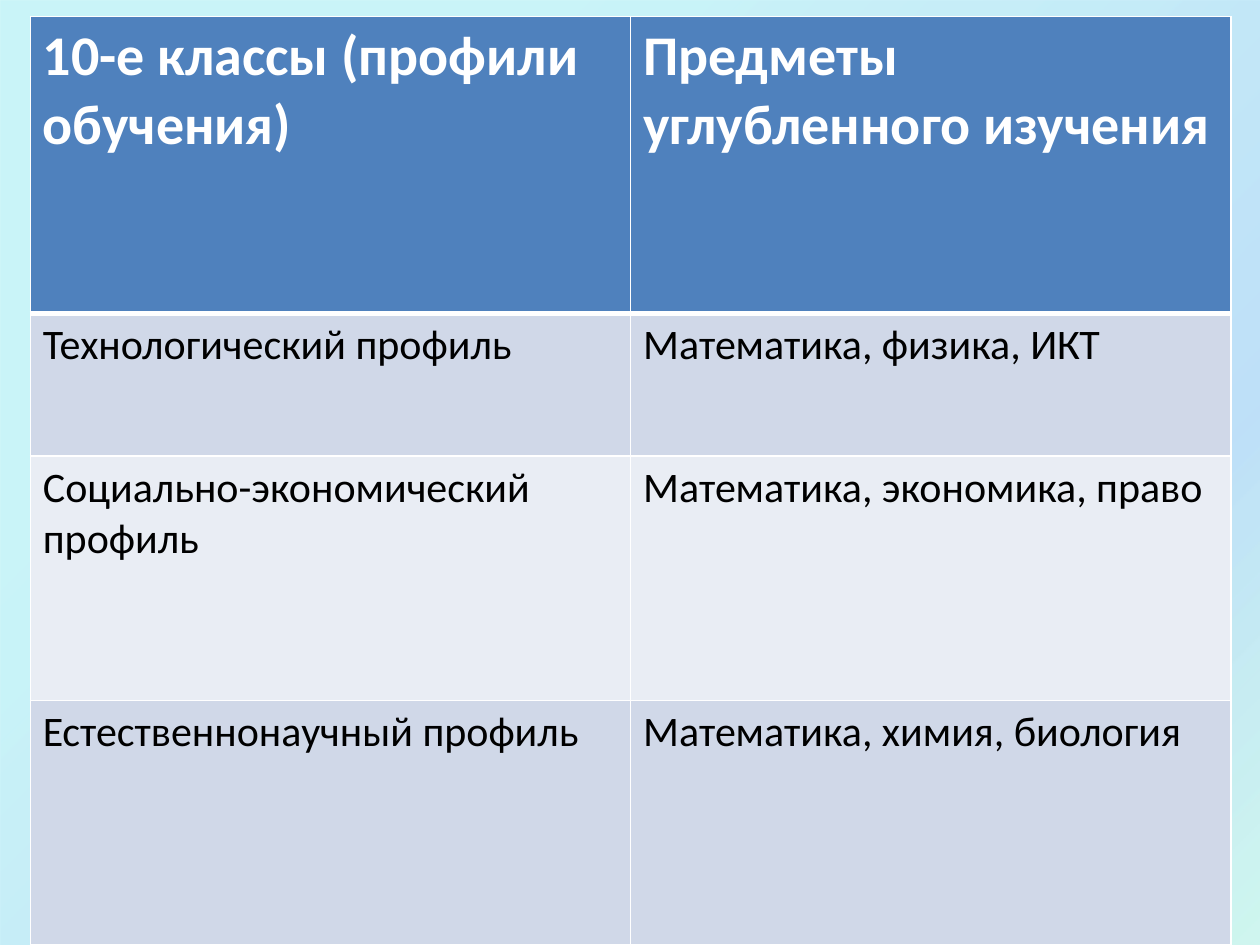
import pptx
import pptx.dml.color
import pptx.enum.shapes
import pptx.oxml
import pptx.oxml.ns
import pptx.util
from pptx.util import Inches

ROWS = [
    ("10-е классы (профили обучения)", "Предметы углубленного изучения"),
    ("Технологический профиль", "Математика, физика, ИКТ"),
    ("Социально-экономический профиль", "Математика, экономика, право"),
    ("Естественнонаучный профиль", "Математика, химия, биология"),
]
ROW_HEIGHTS = [2.36, 1.13, 1.94, 1.94]
COLUMN_WIDTH = 4.765
HEADER_FILL = "4F81BD"
BAND_FILLS = ["E9EDF4", "D0D8E8"]
BORDER_COLOUR = "FFFFFF"
HEADER_FONT = {"name": "Calibri", "size": pptx.util.Pt(32), "bold": True}
BODY_FONT = {"name": "Calibri", "size": pptx.util.Pt(24), "bold": False}
# position %, colour, opacity %
BACKDROP_STOPS = [
    (25, "21D6E0", 23),
    (75, "0087E6", 25),
    (100, "03D4A8", 18),
    (100, "005CBF", 26),
]
NAMESPACE = pptx.oxml.ns.nsdecls("a")


def paint(target, colour):
    target.solid()
    target.fore_color.rgb = pptx.dml.color.RGBColor.from_string(colour)


def add_backdrop(page):
    box = page.shapes.add_shape(
        pptx.enum.shapes.MSO_SHAPE.RECTANGLE, 0, 0, Inches(10), Inches(7.67))
    box.shadow.inherit = False
    box.line.fill.background()
    stops = "".join(
        f'<a:gs pos="{position * 1000}"><a:srgbClr val="{colour}">'
        f'<a:alpha val="{opacity * 1000}"/></a:srgbClr></a:gs>'
        for position, colour, opacity in BACKDROP_STOPS)
    gradient = pptx.oxml.parse_xml(
        f'<a:gradFill {NAMESPACE} rotWithShape="1"><a:gsLst>{stops}</a:gsLst>'
        f'<a:lin ang="{45 * 60000}" scaled="0"/></a:gradFill>')
    box._element.spPr.find(pptx.oxml.ns.qn("a:prstGeom")).addnext(gradient)


def add_borders(cell, widths):
    """Draw the cell edges; widths maps L, R, T and B to points, in that order."""
    properties = cell._tc.get_or_add_tcPr()
    for side, width in widths.items():
        properties.append(pptx.oxml.parse_xml(
            f'<a:ln{side} {NAMESPACE} w="{pptx.util.Pt(width)}"><a:solidFill>'
            f'<a:srgbClr val="{BORDER_COLOUR}"/></a:solidFill></a:ln{side}>'))


def fill_cell(cell, text, row):
    header = row == 0
    add_borders(cell, {"L": 1, "R": 1,
                       "T": 3 if row == 1 else 1,
                       "B": 3 if header else 1})
    paint(cell.fill, HEADER_FILL if header else BAND_FILLS[row % 2])
    cell.text = text
    font = cell.text_frame.paragraphs[0].runs[0].font
    for name, value in (HEADER_FONT if header else BODY_FONT).items():
        setattr(font, name, value)
    paint(font.fill, "FFFFFF" if header else "000000")


def add_profile_table(page):
    columns = len(ROWS[0])
    table = page.shapes.add_table(
        len(ROWS), columns, Inches(0.24), Inches(0.13),
        Inches(COLUMN_WIDTH * columns), Inches(sum(ROW_HEIGHTS))).table
    for column in table.columns:
        column.width = Inches(COLUMN_WIDTH)
    for row, (texts, height) in enumerate(zip(ROWS, ROW_HEIGHTS)):
        table.rows[row].height = Inches(height)
        for column, text in enumerate(texts):
            fill_cell(table.cell(row, column), text, row)


def main():
    deck = pptx.Presentation()
    deck.slide_width, deck.slide_height = Inches(10), Inches(7.5)
    page = deck.slides.add_slide(deck.slide_layouts[6])
    add_backdrop(page)
    add_profile_table(page)
    deck.save("out.pptx")


if __name__ == "__main__":
    main()
